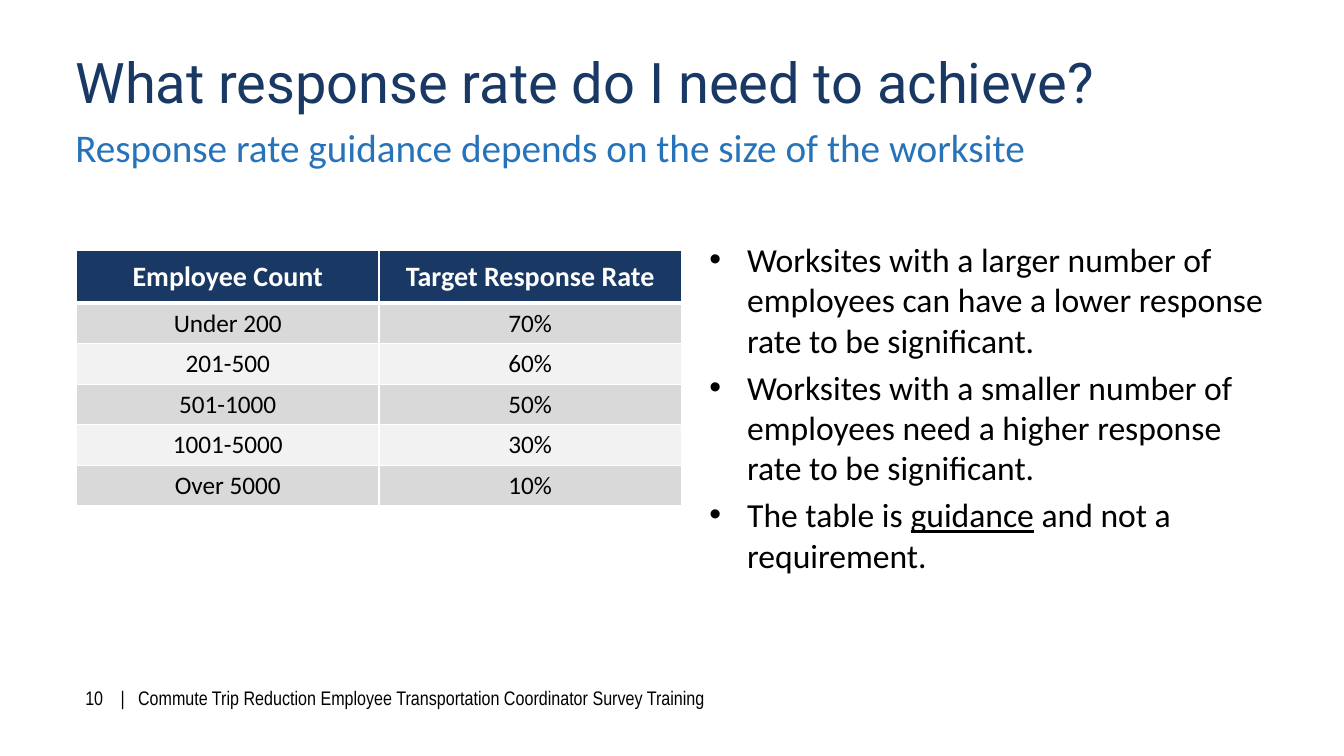
from dataclasses import dataclass
from typing import NamedTuple

from lxml.etree import SubElement
from pptx import Presentation
from pptx.dml.color import RGBColor
from pptx.enum.text import MSO_ANCHOR as Anchor, PP_ALIGN as Align
from pptx.oxml import parse_xml
from pptx.oxml.ns import nsdecls, qn
from pptx.util import Cm, Pt


@dataclass(frozen=True)
class Theme:
    navy: str = "193964"
    blue: str = "2773BA"
    black: str = "000000"
    white: str = "FFFFFF"
    bands: tuple[str, str] = ("D9D9D9", "F2F2F2")
    title_font: str = "Roboto"
    body_font: str = "Calibri"
    footer_font: str = "Arial Narrow"
    title_size: int = 40
    subtitle_size: int = 28
    bullet_size: int = 24
    header_size: int = 20
    cell_size: int = 18
    footer_size: int = 14


class Box(NamedTuple):
    left: float
    top: float
    width: float
    height: float

    def lengths(self) -> tuple[Cm, ...]:
        return tuple(Cm(value) for value in self)


class Target(NamedTuple):
    employees: str
    rate: str


THEME = Theme()
TITLE_BOX = Box(1.9, 1.12, 30.05, 1.85)
SUBTITLE_BOX = Box(1.9, 3.1, 30.05, 1.19)
BULLETS_BOX = Box(17.88, 6.02, 14.07, 9.65)
FOOTER_BOX = Box(1.9, 17.15, 29.18, 0.94)
TABLE_BOX = Box(1.93, 6.32, 15.24, 6.42)
HEADER_HEIGHT = 1.32
BULLET_INDENT = 0.95
FOOTER_TABS = (0.89, 1.33)

HEADER = Target("Employee Count", "Target Response Rate")
TARGETS = (
    Target("Under 200", "70%"),
    Target("201-500", "60%"),
    Target("501-1000", "50%"),
    Target("1001-5000", "30%"),
    Target("Over 5000", "10%"),
)
BULLETS = (
    ("Worksites with a larger number of employees can have a lower response rate to be significant.",),
    ("Worksites with a smaller number of employees need a higher response rate to be significant.",),
    ("The table is ", "guidance", " and not a requirement."),
)


def add_run(p, text: str, *, size: float, color: str = THEME.black,
            font: str = THEME.body_font, bold: bool = False,
            underline: bool = False) -> None:
    r = p.add_run()
    r.text = text
    r.font.name = font
    r.font.size = Pt(size)
    r.font.bold = bold
    r.font.underline = underline
    r.font.color.rgb = RGBColor.from_string(color)


def prepare_frame(sp, inset: bool = False, anchor: Anchor = Anchor.TOP):
    """Wrap the text of a shape, fix its anchor and drop its margins unless inset."""
    tf = sp.text_frame
    tf.word_wrap = True
    tf.vertical_anchor = anchor
    if not inset:
        tf.margin_left = tf.margin_top = tf.margin_right = tf.margin_bottom = 0
    return tf


def add_frame(s, box: Box, inset: bool = False):
    return prepare_frame(s.shapes.add_textbox(*box.lengths()), inset)


def set_bullet(p) -> None:
    pPr = p._p.get_or_add_pPr()
    pPr.set("marL", str(Cm(BULLET_INDENT)))
    pPr.set("indent", str(-Cm(BULLET_INDENT)))
    SubElement(pPr, qn("a:buFont"), typeface="Arial")
    SubElement(pPr, qn("a:buChar"), char="•")


def set_tabs(p, stops: tuple[float, ...]) -> None:
    tabs = SubElement(p._p.get_or_add_pPr(), qn("a:tabLst"))
    for stop in stops:
        SubElement(tabs, qn("a:tab"), pos=str(Cm(stop)), algn="l")


def set_borders(cell, bottom: float = 1, top: float = 1) -> None:
    widths = {"lnL": 1, "lnR": 1, "lnT": top, "lnB": bottom}
    for i, (side, width) in enumerate(widths.items()):
        line = parse_xml(
            f'<a:{side} {nsdecls("a")} w="{Pt(width)}"><a:solidFill>'
            f'<a:srgbClr val="{THEME.white}"/></a:solidFill></a:{side}>')
        cell._tc.get_or_add_tcPr().insert(i, line)


def add_title(s) -> None:
    sp = s.shapes.title
    sp.left, sp.top, sp.width, sp.height = TITLE_BOX.lengths()
    p = prepare_frame(sp, anchor=Anchor.MIDDLE).paragraphs[0]
    p.alignment = Align.LEFT
    add_run(p, "What response rate do I need to achieve?", size=THEME.title_size,
            color=THEME.navy, font=THEME.title_font)


def add_bullets(s) -> None:
    tf = add_frame(s, BULLETS_BOX)
    for i, parts in enumerate(BULLETS):
        p = tf.add_paragraph() if i else tf.paragraphs[0]
        set_bullet(p)
        if i:
            p.space_before = Pt(0.2 * THEME.bullet_size)
        for part in parts:
            add_run(p, part, size=THEME.bullet_size, underline=part == "guidance")


def add_targets(s) -> None:
    rows = (HEADER, *TARGETS)
    table = s.shapes.add_table(len(rows), len(HEADER), *TABLE_BOX.lengths()).table
    table.horz_banding = False
    for col in table.columns:
        col.width = Cm(TABLE_BOX.width / len(HEADER))
    row_height = (TABLE_BOX.height - HEADER_HEIGHT) / len(TARGETS)
    for i, target in enumerate(rows):
        is_header = i == 0
        table.rows[i].height = Cm(HEADER_HEIGHT if is_header else row_height)
        fill = THEME.navy if is_header else THEME.bands[(i - 1) % 2]
        for cell, text in zip(table.rows[i].cells, target):
            cell.fill.solid()
            cell.fill.fore_color.rgb = RGBColor.from_string(fill)
            cell.vertical_anchor = Anchor.MIDDLE if is_header else Anchor.TOP
            set_borders(cell, bottom=3 if is_header else 1, top=3 if i == 1 else 1)
            p = cell.text_frame.paragraphs[0]
            p.alignment = Align.CENTER
            add_run(p, text, bold=is_header,
                    size=THEME.header_size if is_header else THEME.cell_size,
                    color=THEME.white if is_header else THEME.black)


def add_footer(s) -> None:
    p = add_frame(s, FOOTER_BOX, inset=True).paragraphs[0]
    set_tabs(p, FOOTER_TABS)
    add_run(p, "10\t|\tCommute Trip Reduction Employee Transportation Coordinator Survey Training",
            size=THEME.footer_size, font=THEME.footer_font)


def main() -> None:
    prs = Presentation()
    prs.slide_width, prs.slide_height = Cm(33.87), Cm(19.05)
    s = prs.slides.add_slide(prs.slide_layouts.get_by_name("Title Only"))
    add_title(s)
    add_run(add_frame(s, SUBTITLE_BOX).paragraphs[0],
            "Response rate guidance depends on the size of the worksite",
            size=THEME.subtitle_size, color=THEME.blue)
    add_bullets(s)
    add_footer(s)
    add_targets(s)
    prs.save("out.pptx")


if __name__ == "__main__":
    main()
